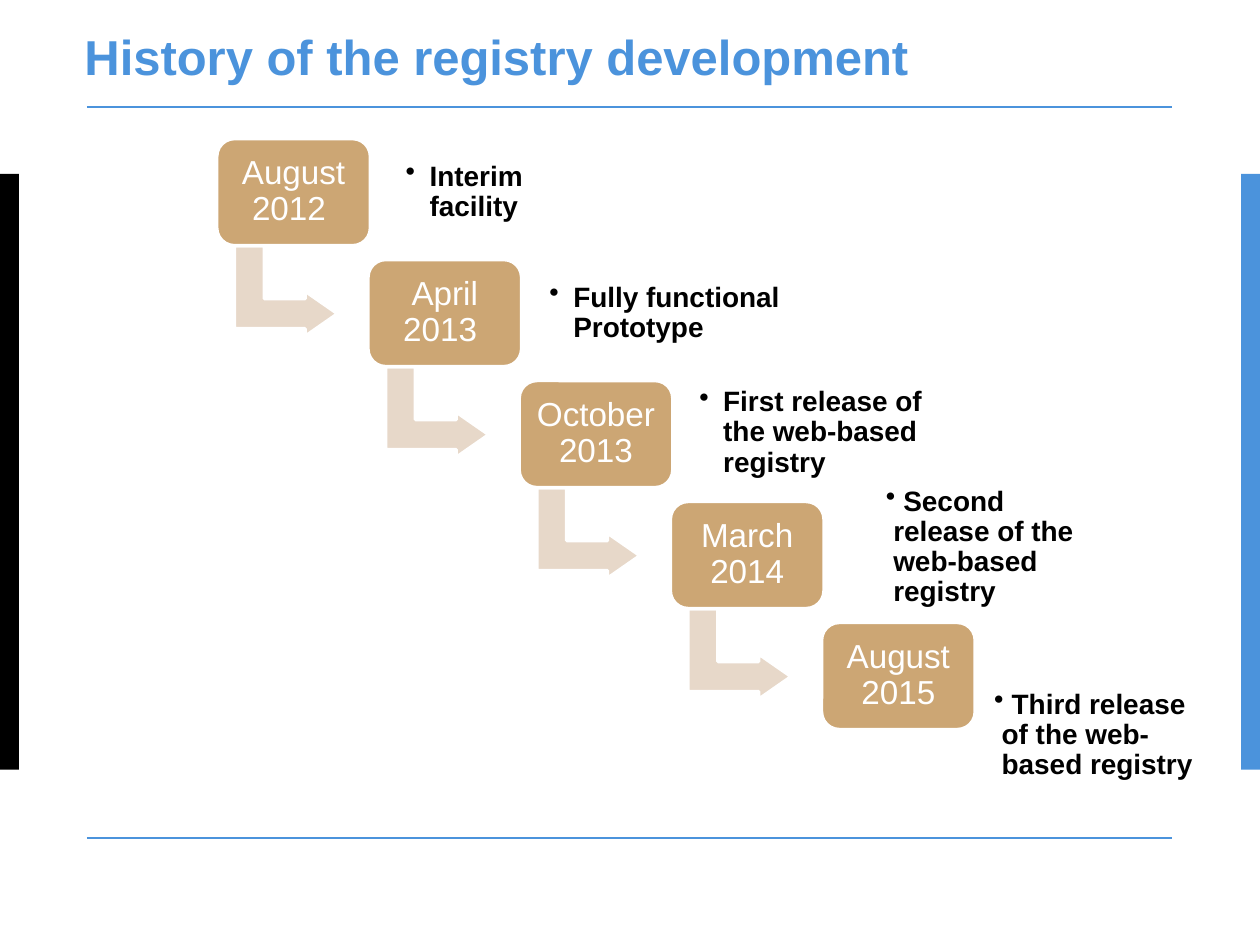
from dataclasses import dataclass

from lxml import etree
from pptx import Presentation, util as u
from pptx.dml.color import RGBColor
from pptx.enum import shapes, text
from pptx.oxml.ns import qn

WIDE, HIGH = 10, 7.5
BLUE, TAN, SAND = "4B93DC", "CCA674", "E7D8C9"
BLACK, WHITE = "000000", "FFFFFF"
LEFT, TOP = 1.72, 1.1      # first step
COL, ROW = 1.2, 0.96       # shift from one step to the next
BOX_W, BOX_H = 1.22, 0.85


@dataclass
class Step:
    date: str
    note: str
    area: tuple
    pad: float = 0.07
    hang: float = 0.19


STEPS = [
    Step("August 2012 ", "Interim facility", (3.15, 1.18, 1.7, 0.69)),
    Step("April 2013 ", "Fully functional Prototype", (4.29, 2.14, 2.05, 0.69)),
    Step("October 2013", "First release of the web-based registry",
         (5.48, 3.09, 2.16, 0.69)),
    Step("March 2014", " Second release of the web-based registry",
         (6.97, 3.91, 1.81, 0.87), 0.06, 0.06),
    Step("August 2015", " Third release of the web-based registry",
         (7.83, 5.4, 1.81, 0.87), 0.06, 0.06),
]


def color(code: str) -> RGBColor:
    return RGBColor.from_string(code)


def inches(*sizes: float) -> list:
    return [u.Inches(size) for size in sizes]


def block(slide, kind, area: tuple, fill: str, edge: bool = True):
    shape = slide.shapes.add_shape(kind, *inches(*area))
    shape.shadow.inherit = False
    shape.fill.solid()
    shape.fill.fore_color.rgb = color(fill)
    if edge:
        shape.line.color.rgb = color(WHITE)
        shape.line.width = u.Pt(2)
    else:
        shape.line.fill.background()
    return shape


def rule(slide, top: float) -> None:
    line = slide.shapes.add_connector(
        shapes.MSO_CONNECTOR.STRAIGHT, *inches(0.69, top, 9.3, top))
    line.line.color.rgb = color(BLUE)
    line.line.width = u.Pt(1)
    etree.SubElement(line._element.spPr, qn("a:effectLst"))


def write(shape, words: str, size: float, ink: str, bold: bool, pad: float,
          hang: float = 0):
    """Fill the shape with one paragraph, bulleted if it has a hanging indent."""
    frame = shape.text_frame
    frame.word_wrap = True
    frame.vertical_anchor = text.MSO_ANCHOR.MIDDLE
    frame.margin_left = frame.margin_right = u.Inches(pad)
    frame.margin_top = frame.margin_bottom = u.Inches(pad)
    para = frame.paragraphs[0]
    para.text = words
    if hang:
        props = para._p.get_or_add_pPr()
        props.set("marL", str(u.Inches(hang)))
        props.set("indent", str(-u.Inches(hang)))
        etree.SubElement(props, qn("a:buChar"), char="•")
    para.line_spacing = 0.9
    font = para.font
    font.name, font.size, font.bold = "Arial", u.Pt(size), bold
    font.color.rgb = color(ink)
    return para


def arrow(slide, left: float, top: float) -> None:
    kind = shapes.MSO_SHAPE.BENT_UP_ARROW
    shape = block(slide, kind, (left + 0.19, top + 0.8, 0.72, 0.82), SAND)
    shape.rotation = 90
    for spot, value in enumerate((0.33, 0.25, 0.36)):
        shape.adjustments[spot] = value


def stage(slide, rank: int, step: Step) -> None:
    left, top = LEFT + rank * COL, TOP + rank * ROW
    if rank < len(STEPS) - 1:
        arrow(slide, left, top)
    box = block(slide, shapes.MSO_SHAPE.ROUNDED_RECTANGLE,
                (left, top, BOX_W, BOX_H), TAN)
    para = write(box, step.date, 19, WHITE, False, 0.07)
    para.alignment = text.PP_ALIGN.CENTER
    note = slide.shapes.add_textbox(*inches(*step.area))
    write(note, step.note, 16, BLACK, True, step.pad, step.hang)


def main() -> None:
    deck = Presentation()
    deck.slide_width, deck.slide_height = inches(WIDE, HIGH)
    slide = deck.slides.add_slide(deck.slide_layouts[6])
    bar = 0.15
    for left, fill in ((0, BLACK), (WIDE - bar, BLUE)):
        block(slide, shapes.MSO_SHAPE.RECTANGLE,
              (left, 1.38, bar, 4.73), fill, edge=False)
    for top in (0.85, 6.65):
        rule(slide, top)
    title = slide.shapes.add_textbox(*inches(0.67, 0.21, 8.61, 0.47))
    para = write(title, "History of the registry development", 28, BLUE, True, 0)
    para.line_spacing = 1.0
    for rank, step in enumerate(STEPS):
        stage(slide, rank, step)
    deck.save("out.pptx")


if __name__ == "__main__":
    main()
